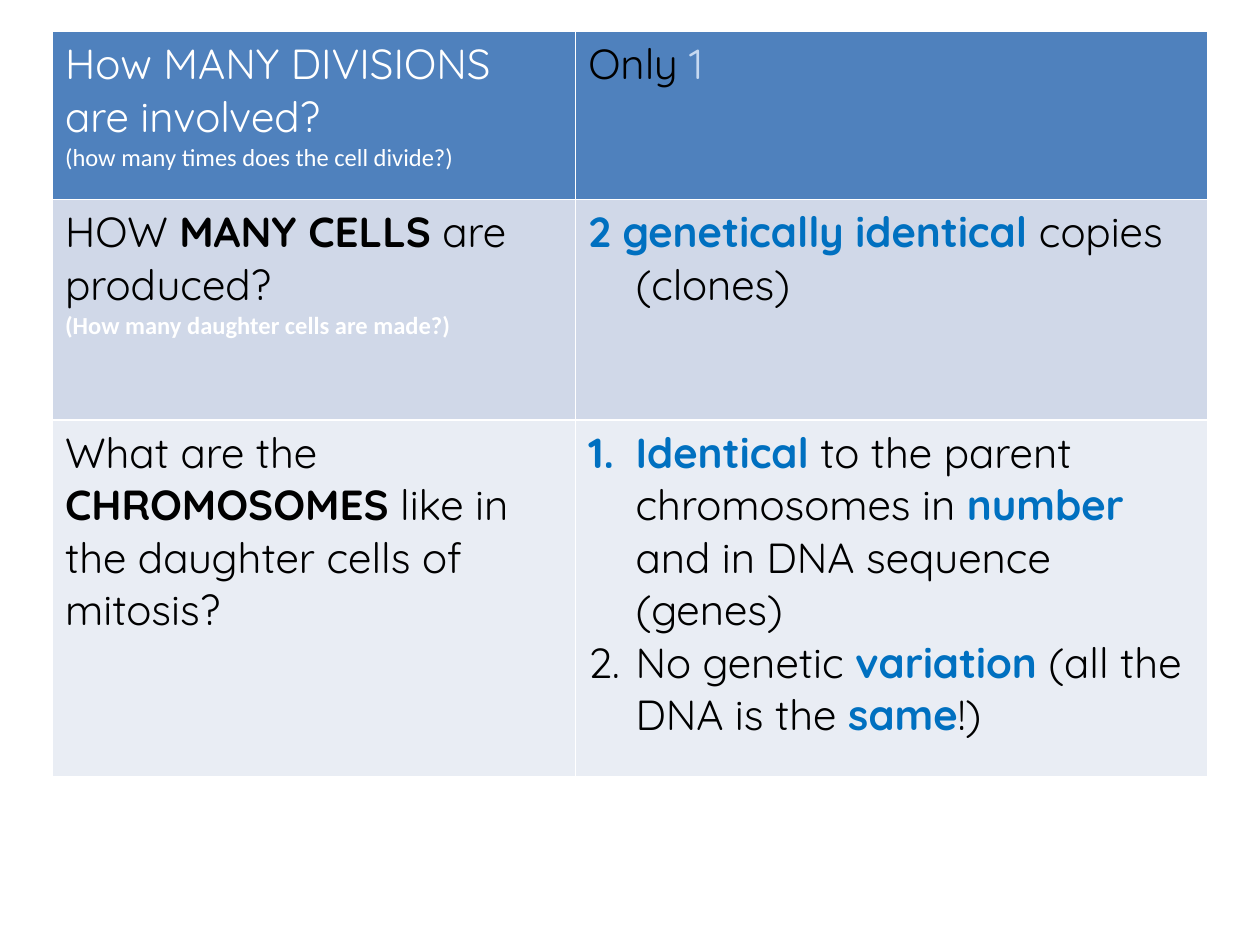
from dataclasses import dataclass

from lxml.etree import SubElement
from pptx import Presentation
from pptx.dml.color import RGBColor as Color
from pptx.oxml.ns import qn
from pptx.util import Pt


@dataclass(frozen=True)
class Theme:
    white: str = "FFFFFF"
    black: str = "000000"
    answer: str = "0070C0"
    pale: str = "C6D9F1"
    row_fills: tuple = ("4F81BD", "D0D8E8", "E9EDF4")
    body_font: str = "Quicksand"
    hint_font: str = "Calibri"
    body_size: int = 24
    hint_size: int = 14
    border: int = 1
    indent: int = 27


@dataclass
class Line:
    spans: list
    hanging: bool = False
    numbered: bool = False


THEME = Theme()


def plain(text, color=THEME.black):
    return text, color, False, THEME.body_font, THEME.body_size


def strong(text, color=THEME.black):
    return text, color, True, THEME.body_font, THEME.body_size


def answer(text):
    return strong(text, THEME.answer)


def hint(text, bold=False):
    return text, THEME.white, bold, THEME.hint_font, THEME.hint_size


ROWS = [
    (
        [
            Line([plain("How MANY DIVISIONS are involved?", THEME.white)]),
            Line([hint("(how many times does the cell divide?)")]),
        ],
        [Line([plain("Only "), plain("1", THEME.pale)])],
    ),
    (
        [
            Line([plain("HOW "), strong("MANY CELLS"), plain(" are produced?")]),
            Line([hint("(How many daughter cells are made?)", bold=True)]),
        ],
        [Line([answer("2 genetically identical "), plain("copies (clones)")], hanging=True)],
    ),
    (
        [
            Line([
                plain("What are the "),
                strong("CHROMOSOMES"),
                plain(" like in the daughter cells of mitosis?"),
            ]),
        ],
        [
            Line([
                answer("Identical"),
                plain(" to the parent chromosomes in "),
                answer("number"),
                plain(" and in DNA sequence (genes)"),
            ], hanging=True, numbered=True),
            Line([
                plain("No genetic "),
                answer("variation"),
                plain(" (all the DNA is the "),
                answer("same"),
                plain("!)"),
            ], hanging=True, numbered=True),
        ],
    ),
]


class SlideBuilder:
    def __init__(self, slide, theme):
        self.slide = slide
        self.theme = theme

    def add_table(self, left, top, widths, heights, rows):
        table = self.slide.shapes.add_table(
            len(heights), len(widths), Pt(left), Pt(top), Pt(sum(widths)), Pt(sum(heights))
        ).table
        for column, width in zip(table.columns, widths):
            column.width = Pt(width)
        for row, height, fill, contents in zip(table.rows, heights, self.theme.row_fills, rows):
            row.height = Pt(height)
            for cell, lines in zip(row.cells, contents):
                self.style_cell(cell, fill)
                self.write_lines(cell.text_frame, lines)

    def style_cell(self, cell, fill):
        properties = cell._tc.get_or_add_tcPr()
        for side in "LRTB":
            border = SubElement(properties, qn(f"a:ln{side}"), w=str(Pt(self.theme.border)))
            solid = SubElement(border, qn("a:solidFill"))
            SubElement(solid, qn("a:srgbClr"), val=self.theme.white)
        cell.fill.solid()
        cell.fill.fore_color.rgb = Color.from_string(fill)

    def write_lines(self, frame, lines):
        for index, line in enumerate(lines):
            para = frame.add_paragraph() if index else frame.paragraphs[0]
            if line.hanging:
                self.hang(para, line.numbered)
            for text, color, bold, font, size in line.spans:
                span = para.add_run()
                span.text = text
                span.font.name = font
                span.font.size = Pt(size)
                span.font.bold = bold
                span.font.color.rgb = Color.from_string(color)

    def hang(self, para, numbered):
        properties = para._p.get_or_add_pPr()
        properties.set("marL", str(Pt(self.theme.indent)))
        properties.set("indent", str(-Pt(self.theme.indent)))
        if numbered:
            SubElement(properties, qn("a:buFont"), typeface="+mj-lt")
            SubElement(properties, qn("a:buAutoNum"), type="arabicPeriod")


def main():
    deck = Presentation()
    deck.slide_width, deck.slide_height = Pt(720), Pt(540)
    page = deck.slides.add_slide(deck.slide_layouts[6])
    builder = SlideBuilder(page, THEME)
    builder.add_table(30, 18, widths=(299, 361), heights=(96, 126, 204), rows=ROWS)
    deck.save("out.pptx")


if __name__ == "__main__":
    main()
